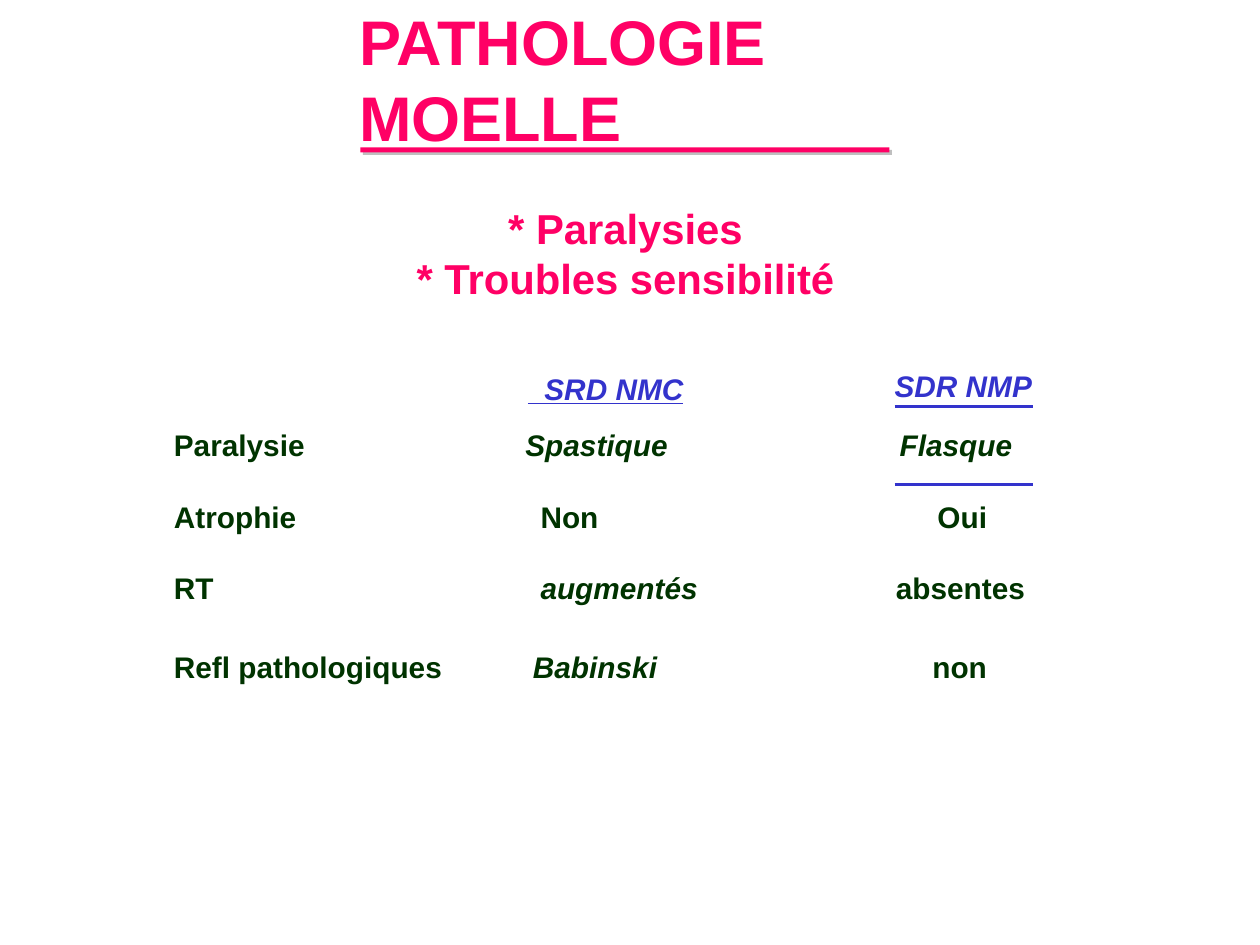
from lxml import etree
from pptx import Presentation
from pptx.dml.color import RGBColor
from pptx.enum.shapes import MSO_SHAPE
from pptx.enum.text import MSO_ANCHOR, PP_ALIGN
from pptx.oxml.ns import qn
from pptx.util import Inches, Pt

PINK, BLUE, GREEN, GREY = "FF0065", "3333CC", "003300", "BFBFBF"
NO_STYLE = "{2D5ABB26-0587-4C30-8999-92F81FD0307C}"

COLUMN_WIDTHS = [2.47, 3.28, 1.1]
# Each cell: text, indent in inches, italic
HEADER = [("", 0, False), ("  SRD NMC", 0.37, True), ("SDR NMP", 0, True)]
SIGNS = [
    [("Paralysie", 0.03, False), ("Spastique", 0.35, True), ("Flasque", 0.04, True)],
    [("Atrophie", 0.03, False), ("Non", 0.47, False), ("Oui", 0.34, False)],
    [("RT", 0.03, False), ("augmentés", 0.47, True), ("absentes", 0.01, False)],
    [("Refl pathologiques", 0.03, False), ("Babinski", 0.41, True), ("non", 0.3, False)],
]
ROW_HEIGHTS = [0.27, 0.62, 0.57, 0.57, 0.42]
TOP_MARGINS = [0, 0.18, 0.13, 0.13, 0.13]


def rgb(color):
    return RGBColor.from_string(color)


def style(paragraph, size, color, italic=False):
    font = paragraph.font
    font.name, font.size, font.bold, font.italic = "Arial", Pt(size), True, italic
    font.color.rgb = rgb(color)


def add_lines(slide, box, lines, size, align, anchor):
    frame = slide.shapes.add_textbox(*map(Inches, box)).text_frame
    frame.word_wrap = True
    frame.vertical_anchor = anchor
    frame.margin_left = frame.margin_right = frame.margin_bottom = 0
    frame.margin_top = Inches(0.01)
    frame.text = "\n".join(lines)
    for paragraph in frame.paragraphs:
        paragraph.alignment = align
        style(paragraph, size, PINK)


def add_bar(slide, left, top, width, height, color):
    bar = slide.shapes.add_shape(
        MSO_SHAPE.RECTANGLE, *map(Inches, (left, top, width, height)))
    bar.shadow.inherit = False
    bar.fill.solid()
    bar.fill.fore_color.rgb = rgb(color)
    bar.line.fill.background()


def add_title(slide, left, top, width, height):
    add_lines(slide, (left, top, width, height), ["PATHOLOGIE MOELLE"], 36,
              PP_ALIGN.LEFT, MSO_ANCHOR.BOTTOM)
    underline_top = top + height - 0.05
    for offset, color in ((0.02, GREY), (0, PINK)):
        add_bar(slide, left + 0.01 + offset, underline_top + offset, 4.2, 0.04, color)


def add_bottom_border(cell, color, width):
    properties = cell._tc.get_or_add_tcPr()
    line = etree.Element(qn("a:lnB"), w=str(Pt(width)))
    fill = etree.SubElement(line, qn("a:solidFill"))
    etree.SubElement(fill, qn("a:srgbClr"), val=color)
    properties.insert(0, line)


def fill_cell(cell, text, indent, italic, top_margin, color):
    cell.fill.background()
    cell.margin_left = cell.margin_right = cell.margin_bottom = 0
    cell.margin_top = Inches(top_margin)
    paragraph = cell.text_frame.paragraphs[0]
    paragraph.text = text
    paragraph._p.get_or_add_pPr().set("marL", str(Inches(indent)))
    style(paragraph, 17, color, italic)
    return paragraph


def add_comparison(slide, left, top):
    rows = [HEADER, *SIGNS]
    table = slide.shapes.add_table(
        len(rows), len(COLUMN_WIDTHS), Inches(left), Inches(top),
        Inches(sum(COLUMN_WIDTHS)), Inches(sum(ROW_HEIGHTS))).table
    table.first_row = table.horz_banding = False
    table._tbl.tblPr.find(qn("a:tableStyleId")).text = NO_STYLE
    for column, width in zip(table.columns, COLUMN_WIDTHS):
        column.width = Inches(width)
    for r, (signs, height, margin) in enumerate(zip(rows, ROW_HEIGHTS, TOP_MARGINS)):
        table.rows[r].height = Inches(height)
        for c, (text, indent, italic) in enumerate(signs):
            paragraph = fill_cell(table.cell(r, c), text, indent, italic, margin,
                                  GREEN if r else BLUE)
            if r == len(rows) - 1:
                paragraph.line_spacing = Pt(23.2)
    central, peripheral = (table.cell(0, c).text_frame.paragraphs[0] for c in (1, 2))
    central.font.underline = True
    central.line_spacing = Pt(21.3)
    peripheral.line_spacing = Pt(19.9)
    for r in (0, 1):
        add_bottom_border(table.cell(r, 2), BLUE, 2.25)


def main():
    presentation = Presentation()
    presentation.slide_width, presentation.slide_height = Inches(10), Inches(7.5)
    slide = presentation.slides.add_slide(presentation.slide_layouts[6])
    add_comparison(slide, 1.35, 2.93)
    add_title(slide, 2.85, -0.47, 4.23, 1.69)
    add_lines(slide, (3.28, 1.6, 3.37, 0.82),
              ["* Paralysies", "* Troubles sensibilité"], 23.9,
              PP_ALIGN.CENTER, MSO_ANCHOR.TOP)
    presentation.save("out.pptx")


if __name__ == "__main__":
    main()
